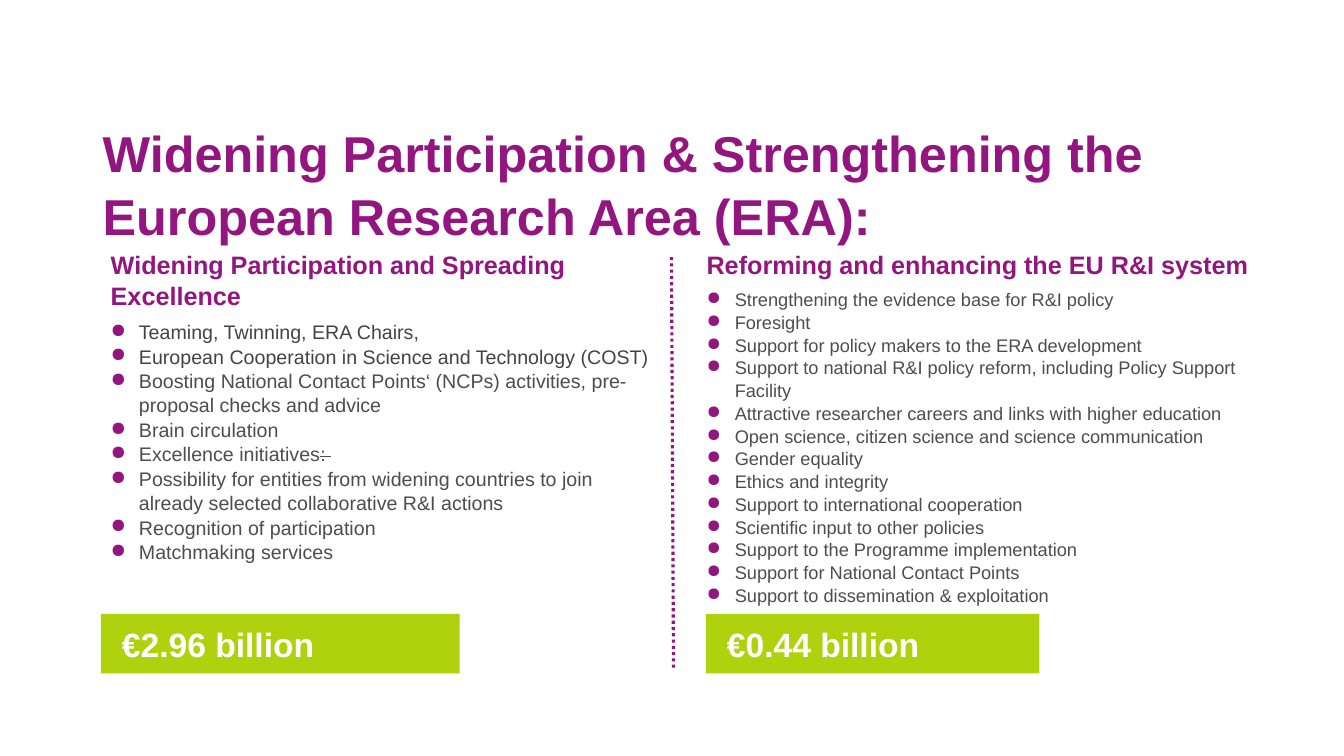
from lxml import etree
from pptx import Presentation
from pptx.dml.color import RGBColor
from pptx.enum.dml import MSO_LINE
from pptx.enum.shapes import MSO_CONNECTOR, MSO_SHAPE
from pptx.enum.text import MSO_ANCHOR, PP_ALIGN
from pptx.oxml.ns import qn
from pptx.util import Inches, Pt

STRAIGHT = MSO_CONNECTOR.STRAIGHT
RECTANGLE = MSO_SHAPE.RECTANGLE
MIDDLE = MSO_ANCHOR.MIDDLE
LEFT = PP_ALIGN.LEFT
DOTTED = MSO_LINE.ROUND_DOT

PURPLE = RGBColor(0x93, 0x16, 0x80)
GREEN = RGBColor(0xB0, 0xD1, 0x0E)
WHITE = RGBColor(0xFF, 0xFF, 0xFF)
DARK = RGBColor(0x44, 0x43, 0x42)
GREY = RGBColor(0x4D, 0x4D, 0x4D)

LINE_SPACING = 1.04
TITLE = "Widening Participation & Strengthening the European Research Area (ERA):"
WIDENING = "Widening Participation and Spreading Excellence"
WIDENING_ITEMS = [
    ("Teaming, Twinning, ERA Chairs,", DARK),
    ("European Cooperation in Science and Technology (COST)", DARK),
    ("Boosting National Contact Points‘ (NCPs) activities, pre-proposal checks and advice", GREY),
    ("Brain circulation", GREY),
    ("Excellence initiatives", GREY, ": "),
    ("Possibility for entities from widening countries to join already selected "
     "collaborative R&I actions", GREY),
    ("Recognition of participation", GREY),
    ("Matchmaking services", GREY),
]
REFORMING = "Reforming and enhancing the EU R&I system"
REFORMING_ITEMS = [(text, GREY) for text in (
    "Strengthening the evidence base for R&I policy",
    "Foresight",
    "Support for policy makers to the ERA development",
    "Support to national R&I policy reform, including Policy Support Facility",
    "Attractive researcher careers and links with higher education",
    "Open science, citizen science and science communication",
    "Gender equality",
    "Ethics and integrity",
    "Support to international cooperation",
    "Scientific input to other policies",
    "Support to the Programme implementation",
    "Support for National Contact Points",
    "Support to dissemination & exploitation",
)]


def add_run(p, text, size, color, bold=False):
    r = p.add_run()
    r.text = text
    font = {"name": "Arial", "size": Pt(size), "bold": bold}
    for key, value in font.items():
        setattr(r.font, key, value)
    r.font.color.rgb = color
    return r


def add_bullet(p):
    pPr = p._p.get_or_add_pPr()
    pPr.set("marL", str(Inches(0.28)))
    pPr.set("indent", str(Inches(-0.28)))
    color = etree.SubElement(pPr, qn("a:buClr"))
    etree.SubElement(color, qn("a:srgbClr")).set("val", str(PURPLE))
    etree.SubElement(pPr, qn("a:buChar")).set("char", "●")


def add_heading(s, left, top, width, height, text, size):
    sp = s.shapes.add_textbox(Inches(left), Inches(top), Inches(width), Inches(height))
    tf = sp.text_frame
    tf.word_wrap = True
    p = tf.paragraphs[0]
    p.line_spacing = LINE_SPACING
    add_run(p, text, size, PURPLE, True)
    return tf


def add_column(s, left, height, heading, items, size):
    tf = add_heading(s, left, 2.41, 5.63, height, heading, 18)
    tf.paragraphs[0].space_after = Pt(6)
    for text, color, *struck in items:
        p = tf.add_paragraph()
        add_bullet(p)
        p.line_spacing = LINE_SPACING
        add_run(p, text, size, color)
        for part in struck:
            r = add_run(p, part, size, color)
            r._r.get_or_add_rPr().set("strike", "sngStrike")


def add_divider(s):
    line = s.shapes.add_connector(
        STRAIGHT, Inches(6.66), Inches(2.55), Inches(6.68), Inches(6.63))
    line.line.color.rgb = PURPLE
    line.line.width = Pt(2.25)
    line.line.dash_style = DOTTED
    etree.SubElement(line._element.spPr, qn("a:effectLst"))


def add_budget(s, left, width, text):
    sp = s.shapes.add_shape(
        RECTANGLE, Inches(left), Inches(6.09), Inches(width), Inches(0.59))
    sp.shadow.inherit = False
    sp.fill.solid()
    sp.fill.fore_color.rgb = GREEN
    sp.line.fill.background()
    tf = sp.text_frame
    frame = {"word_wrap": True, "vertical_anchor": MIDDLE, "margin_left": Inches(0.21)}
    for key, value in frame.items():
        setattr(tf, key, value)
    p = tf.paragraphs[0]
    p.alignment = LEFT
    add_run(p, text, 24, WHITE, True)


def main():
    prs = Presentation()
    prs.slide_width = Inches(13.33)
    prs.slide_height = Inches(7.5)
    s = prs.slides.add_slide(prs.slide_layouts[6])
    add_heading(s, 0.92, 1.14, 11.5, 1.26, TITLE, 36)
    add_column(s, 1, 3.6, WIDENING, WIDENING_ITEMS, 14)
    add_column(s, 6.91, 3.53, REFORMING, REFORMING_ITEMS, 13)
    add_divider(s)
    add_budget(s, 1, 3.56, "€2.96 billion")
    add_budget(s, 7, 3.31, "€0.44 billion")
    prs.save("out.pptx")


if __name__ == "__main__":
    main()
